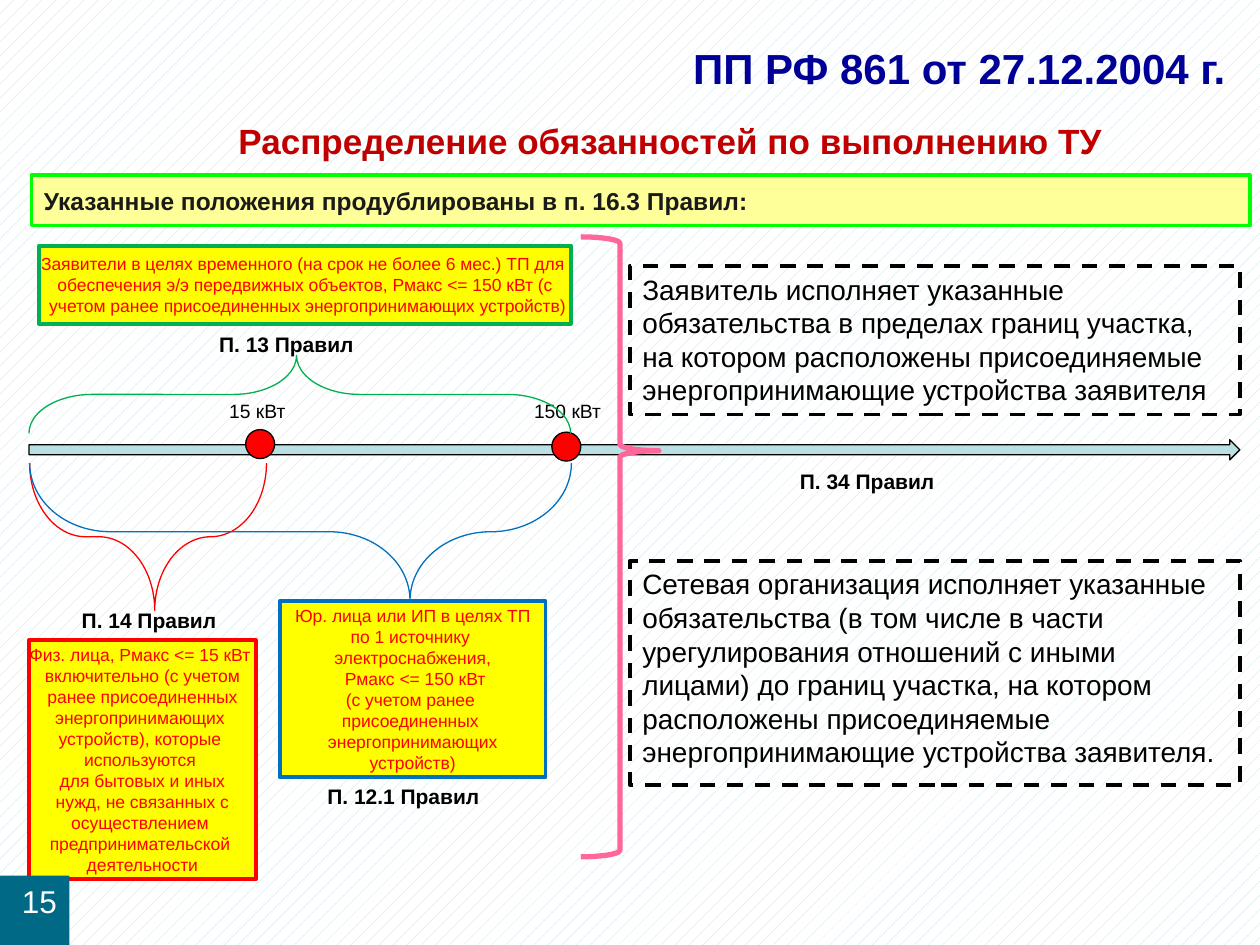
import pptx
import pptx.dml.color
import pptx.enum.dml
import pptx.enum.shapes
import pptx.enum.text
import pptx.util

SHAPE = pptx.enum.shapes.MSO_SHAPE
ALIGN = pptx.enum.text.PP_ALIGN
ANCHOR = pptx.enum.text.MSO_ANCHOR
DASH = pptx.enum.dml.MSO_LINE.DASH
PX = 9144


def color(value):
    return pptx.dml.color.RGBColor.from_string(value)


class Page:
    """Draws styled elements on one slide, with 100 px to the inch."""

    font = "Arial"

    def __init__(self, deck):
        self.slide = deck.slides.add_slide(deck.slide_layouts[5])
        self.shapes = self.slide.shapes

    def background(self, fore, back):
        fill = self.slide.background.fill
        fill.patterned()
        fill.pattern = pptx.enum.dml.MSO_PATTERN.PERCENT_10
        fill.fore_color.rgb = color(fore)
        fill.back_color.rgb = color(back)

    def set_text(self, box, text, size, ink="000000", bold=False,
                 align=ALIGN.LEFT, anchor=ANCHOR.TOP, wrap=True):
        frame = box.text_frame
        frame.text = text
        frame.word_wrap = wrap
        frame.auto_size = pptx.enum.text.MSO_AUTO_SIZE.NONE
        frame.vertical_anchor = anchor
        for para in frame.paragraphs:
            para.alignment = align
            for span in para.runs:
                span.font.name = self.font
                span.font.size = pptx.util.Pt(size)
                span.font.bold = bold
                span.font.color.rgb = color(ink)

    def title(self, place, text, size, ink):
        box = self.shapes.title
        box.left, box.top, box.width, box.height = (n * PX for n in place)
        self.set_text(box, text, size, ink, True, ALIGN.RIGHT, ANCHOR.MIDDLE)

    def label(self, place, text, size, **style):
        box = self.shapes.add_textbox(*(n * PX for n in place))
        self.set_text(box, text, size, **style)

    def shape(self, kind, place, fill=None, line=None, weight=0.75,
              adjust=(), turn=0, dash=None):
        shape = self.shapes.add_shape(kind, *(n * PX for n in place))
        shape.shadow.inherit = False
        shape.rotation = turn
        for index, value in enumerate(adjust):
            shape.adjustments[index] = value
        if fill:
            shape.fill.solid()
            shape.fill.fore_color.rgb = color(fill)
        else:
            shape.fill.background()
        if line:
            shape.line.color.rgb = color(line)
            shape.line.width = pptx.util.Pt(weight)
            if dash:
                shape.line.dash_style = dash
        else:
            shape.line.fill.background()
        return shape

    def brace(self, place, line, adjust, turn=0, weight=0.75):
        self.shape(SHAPE.RIGHT_BRACE, place, None, line, weight, adjust, turn)

    def applicants(self, place, line, lines):
        box = self.shape(SHAPE.RECTANGLE, place, "FFFF00", line, 2.25)
        self.set_text(box, "\n".join(lines), 10, "FF0000", align=ALIGN.CENTER,
                      anchor=ANCHOR.MIDDLE, wrap=False)

    def duty(self, place, text):
        box = self.shape(SHAPE.RECTANGLE, place, None, "000000", 2.25, dash=DASH)
        self.set_text(box, text, 16)


def main():
    deck = pptx.Presentation()
    deck.slide_width, deck.slide_height = 1000 * PX, 750 * PX
    page = Page(deck)
    page.background("BBE0E3", "FFFFFF")

    page.shape(SHAPE.RIGHT_ARROW, (23, 349, 961, 16), "BBE0E3", "000000",
               adjust=(0.5, 0.5))
    page.title((166, 28, 826, 51), "ПП РФ 861 от 27.12.2004 г. ", 24, "000099")
    page.label((119, 85, 826, 48), "Распределение обязанностей по выполнению ТУ", 20,
               ink="C00000", bold=True, align=ALIGN.CENTER, anchor=ANCHOR.BOTTOM)
    banner = page.shape(SHAPE.RECTANGLE, (25, 139, 967, 40), "FFFF99", "00FF00", 2)
    page.set_text(banner, "Указанные положения продублированы в п. 16.3 Правил:", 14,
                  "1A1A1A", True, anchor=ANCHOR.MIDDLE, wrap=False)

    page.applicants((222, 477, 211, 140), "0070C0", [
        "Юр. лица или ИП в целях ТП",
        "по 1 источнику ",
        "электроснабжения,",
        " Рмакс <= 150 кВт",
        "(с учетом ранее ",
        "присоединенных ",
        "энергопринимающих",
        "устройств)",
    ])
    page.applicants((31, 195, 422, 62), "00B050", [
        "Заявители в целях временного (на срок не более 6 мес.) ТП для ",
        "обеспечения э/э передвижных объектов, Рмакс <= 150 кВт (с",
        " учетом ранее присоединенных энергопринимающих устройств)",
    ])
    page.applicants((23, 508, 180, 190), "FF0000", [
        "Физ. лица, Рмакс <= 15 кВт ",
        "включительно (с учетом",
        " ранее присоединенных ",
        "энергопринимающих ",
        "устройств), которые ",
        "используются ",
        "для бытовых и иных",
        " нужд, не связанных с ",
        "осуществлением ",
        "предпринимательской ",
        "деятельности",
    ])

    for left, top in ((195, 341), (438, 343)):
        page.shape(SHAPE.OVAL, (left, top, 23, 23), "FF0000", "000000")
    for left, power in ((172, "15 кВт"), (414, "150 кВт")):
        page.label((left, 312, 86, 29), power, 11)

    page.brace((59, 332, 117, 188), "FF0000", (0.567, 0.472), 90)
    page.brace((184, 207, 109, 430), "0070C0", (0.819, 0.298), 90)
    page.brace((207, 98, 62, 430), "00B050", (0.81, 0.494), 270)
    for left, top, width, clause in (
        (250, 617, 164, "12.1"),
        (164, 258, 141, "13"),
        (55, 477, 141, "14"),
        (625, 367, 164, "34"),
    ):
        page.label((left, top, width, 30), f"П. {clause} Правил", 12, bold=True)
    page.brace((461, 188, 62, 492), "FF6699", (0.083, 0.345), weight=3)

    page.duty((500, 211, 484, 118),
              "Заявитель исполняет указанные обязательства в пределах границ участка, "
              "на котором расположены присоединяемые энергопринимающие устройства "
              "заявителя")
    page.duty((500, 445, 484, 178),
              "Сетевая организация исполняет указанные обязательства (в том числе в "
              "части урегулирования отношений с иными лицами) до границ участка, на "
              "котором расположены присоединяемые энергопринимающие устройства "
              "заявителя.")

    number = page.shape(SHAPE.RECTANGLE, (0, 695, 55, 55), "006986")
    page.set_text(number, "15", 18, "FFFFFF", align=ALIGN.RIGHT)
    deck.save("out.pptx")


if __name__ == "__main__":
    main()
